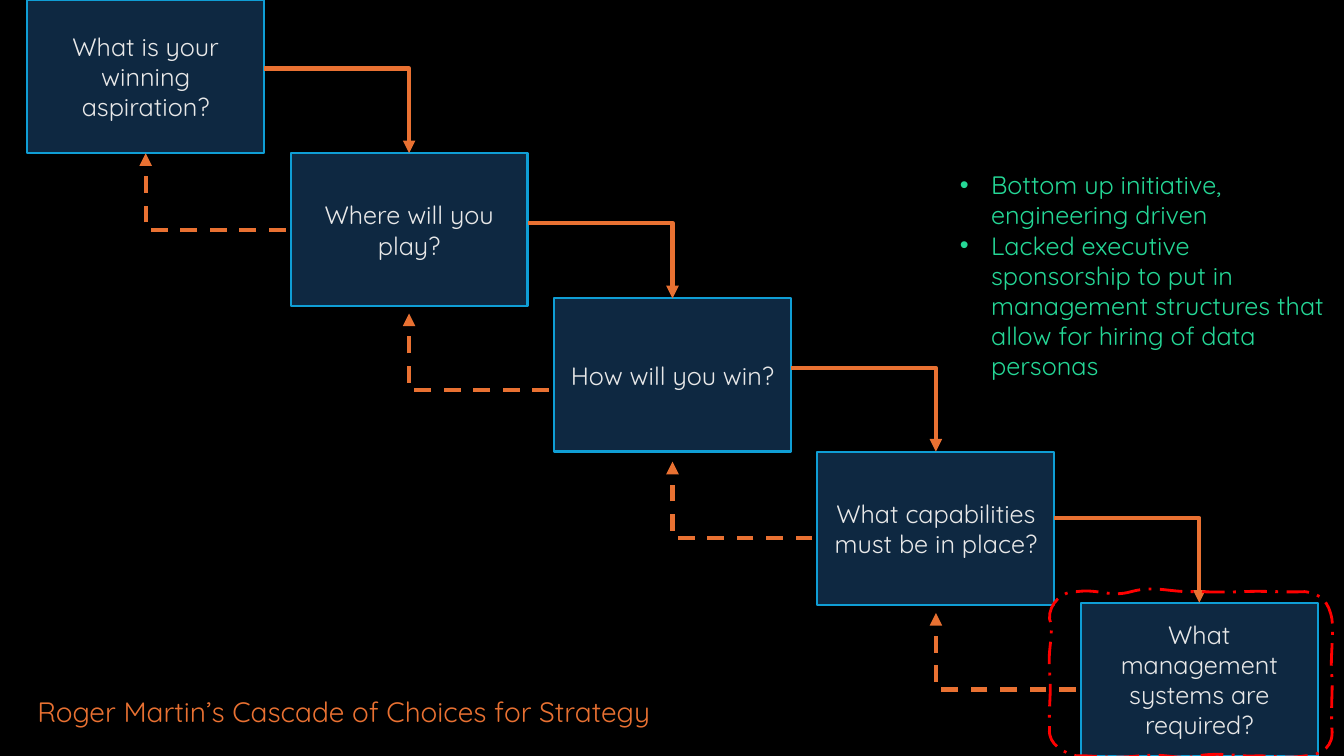
from dataclasses import dataclass
from itertools import pairwise

from lxml.etree import SubElement
from pptx import Presentation
from pptx.dml.color import RGBColor
from pptx.enum.dml import MSO_LINE_DASH_STYLE as Dash
from pptx.enum.shapes import MSO_CONNECTOR as Connector, MSO_SHAPE as Preset
from pptx.enum.text import MSO_ANCHOR as Anchor, MSO_AUTO_SIZE as AutoSize, PP_ALIGN as Align
from pptx.oxml.ns import qn
from pptx.slide import Slide
from pptx.text.text import _Paragraph as Paragraph
from pptx.util import Inches, Pt


@dataclass(frozen=True)
class Theme:
    font: str = "Quicksand"
    background: str = "000000"
    box_fill: str = "0E2841"
    box_line: str = "0F9ED5"
    box_text: str = "E8E8E8"
    accent: str = "E97132"
    findings: str = "25D796"
    highlight: str = "FF0000"
    text_size: float = 18
    title_size: float = 20
    box_width: float = 1.5
    arrow_width: float = 3
    highlight_width: float = 2


@dataclass(frozen=True)
class Choice:
    question: str
    left: float
    top: float
    width: float = 2.35
    height: float = 1.52

    @property
    def right(self) -> float:
        return self.left + self.width

    @property
    def middle(self) -> float:
        return self.left + self.width / 2


@dataclass(frozen=True)
class Link:
    forward_y: float
    feedback_y: float


THEME = Theme()
FIRST_LEFT, LAST_LEFT = 0.27, 10.72
FEEDBACK_GAP, FEEDBACK_RISE = 0.05, 0.76
BULLET_INDENT = 0.31

QUESTIONS = [
    ("What is your winning aspiration?", 0),
    ("Where will you play?", 1.52),
    ("How will you win?", 2.96),
    ("What capabilities must be in place?", 4.48),
    ("What management systems are required?", 5.98),
]
STEP = (LAST_LEFT - FIRST_LEFT) / (len(QUESTIONS) - 1)
CHOICES = [Choice(question, FIRST_LEFT + i * STEP, top)
           for i, (question, top) in enumerate(QUESTIONS)]
LINKS = [Link(0.68, 2.28), Link(2.21, 3.87), Link(3.65, 5.34), Link(5.14, 6.84)]
FINDINGS = [
    "Bottom up initiative, engineering driven",
    "Lacked executive sponsorship to put in management structures "
    "that allow for hiring of data personas",
]
HIGHLIGHT_START = (10.41, 6.14)
HIGHLIGHT_CURVES = [
    ((10.4, 5.99), (10.54, 5.86), (10.68, 5.87)),
    ((10.9, 5.84), (11.01, 5.93), (11.22, 5.87)),
    ((11.44, 5.81), (11.59, 5.87), (11.79, 5.87)),
    ((11.98, 5.87), (12.09, 5.88), (12.33, 5.87)),
    ((12.56, 5.86), (12.74, 5.88), (12.94, 5.87)),
    ((13.11, 5.89), (13.18, 5.98), (13.21, 6.14)),
    ((13.23, 6.3), (13.19, 6.57), (13.21, 6.71)),
    ((13.22, 6.84), (13.2, 6.97), (13.21, 7.23)),
    ((13.23, 7.4), (13.12, 7.49), (12.94, 7.5)),
    ((12.73, 7.53), (12.55, 7.49), (12.44, 7.5)),
    ((12.33, 7.51), (12.09, 7.46), (11.88, 7.5)),
    ((11.66, 7.54), (11.58, 7.47), (11.29, 7.5)),
    ((11, 7.53), (10.81, 7.49), (10.68, 7.5)),
    ((10.57, 7.48), (10.39, 7.39), (10.41, 7.23)),
    ((10.4, 6.96), (10.43, 6.92), (10.41, 6.66)),
    ((10.39, 6.4), (10.46, 6.29), (10.41, 6.14)),
]


def rgb(color: str) -> RGBColor:
    return RGBColor.from_string(color)


def add_text(paragraph: Paragraph, text: str, color: str, size: float, align: Align) -> None:
    paragraph.alignment = align
    run = paragraph.add_run()
    run.text = text
    run.font.name = THEME.font
    run.font.size = Pt(size)
    run.font.color.rgb = rgb(color)


def style_line(line, color: str, width: float, dash: Dash | None = None) -> None:
    line.color.rgb = rgb(color)
    line.width = Pt(width)
    if dash is not None:
        line.dash_style = dash


def add_choice(slide: Slide, choice: Choice) -> None:
    box = slide.shapes.add_shape(
        Preset.RECTANGLE, Inches(choice.left), Inches(choice.top),
        Inches(choice.width), Inches(choice.height))
    box.shadow.inherit = False
    box.fill.solid()
    box.fill.fore_color.rgb = rgb(THEME.box_fill)
    style_line(box.line, THEME.box_line, THEME.box_width)
    box.text_frame.word_wrap = True
    box.text_frame.vertical_anchor = Anchor.MIDDLE
    add_text(box.text_frame.paragraphs[0], choice.question,
             THEME.box_text, THEME.text_size, Align.CENTER)


def add_arrow(slide: Slide, left: float, top: float, right: float, bottom: float,
              feedback: bool) -> None:
    arrow = slide.shapes.add_connector(
        Connector.ELBOW, Inches(left), Inches(top), Inches(right), Inches(bottom))
    style_line(arrow.line, THEME.accent, THEME.arrow_width, Dash.DASH if feedback else None)
    properties = arrow._element.spPr
    properties.find(qn("a:prstGeom")).set("prst", "bentConnector2")
    if feedback:
        properties.find(qn("a:xfrm")).set("rot", "10800000")
    SubElement(properties.find(qn("a:ln")), qn("a:tailEnd"), type="triangle")
    SubElement(properties, qn("a:effectLst"))


def add_highlight(slide: Slide) -> None:
    start_x, start_y = HIGHLIGHT_START
    builder = slide.shapes.build_freeform(Inches(start_x), Inches(start_y))
    builder.add_line_segments(
        [(Inches(x), Inches(y)) for curve in HIGHLIGHT_CURVES for x, y in curve])
    outline = builder.convert_to_shape()
    outline.shadow.inherit = False
    outline.fill.background()
    style_line(outline.line, THEME.highlight, THEME.highlight_width, Dash.LONG_DASH_DOT)
    segments = list(outline._element.iter(qn("a:lnTo")))
    for first, second, third in zip(*[iter(segments)] * 3):
        curve = first.makeelement(qn("a:cubicBezTo"))
        first.addprevious(curve)
        for segment in (first, second, third):
            curve.append(segment[0])
            segment.getparent().remove(segment)


def place(placeholder, left: float, top: float, width: float, height: float):
    placeholder.left, placeholder.top = Inches(left), Inches(top)
    placeholder.width, placeholder.height = Inches(width), Inches(height)
    frame = placeholder.text_frame
    frame.word_wrap = True
    frame.auto_size = AutoSize.NONE
    frame.vertical_anchor = Anchor.TOP
    return frame


def add_findings(slide: Slide) -> None:
    frame = place(slide.placeholders[1], 9.42, 1.63, 3.92, 2.52)
    for i, finding in enumerate(FINDINGS):
        paragraph = frame.add_paragraph() if i else frame.paragraphs[0]
        add_text(paragraph, finding, THEME.findings, THEME.text_size, Align.LEFT)
        paragraph.space_before = Pt(0)
        properties = paragraph._p.get_or_add_pPr()
        properties.set("marL", str(Inches(BULLET_INDENT)))
        properties.set("indent", str(-Inches(BULLET_INDENT)))
        SubElement(properties, qn("a:buFont"), typeface="Arial")
        SubElement(properties, qn("a:buChar"), char="•")


def main() -> None:
    deck = Presentation()
    deck.slide_width, deck.slide_height = Inches(13.33), Inches(7.5)
    slide = deck.slides.add_slide(deck.slide_layouts[1])
    slide.background.fill.solid()
    slide.background.fill.fore_color.rgb = rgb(THEME.background)

    for choice in CHOICES:
        add_choice(slide, choice)
    for (upper, lower), link in zip(pairwise(CHOICES), LINKS):
        add_arrow(slide, upper.right, link.forward_y, lower.middle, lower.top, False)
        add_arrow(slide, upper.middle, link.feedback_y - FEEDBACK_RISE,
                  lower.left - FEEDBACK_GAP, link.feedback_y, True)

    title = place(slide.shapes.title, 0.27, 6.84, 6.88, 0.44)
    add_text(title.paragraphs[0], "Roger Martin’s Cascade of Choices for Strategy",
             THEME.accent, THEME.title_size, Align.LEFT)
    add_highlight(slide)
    add_findings(slide)
    deck.save("out.pptx")


if __name__ == "__main__":
    main()
